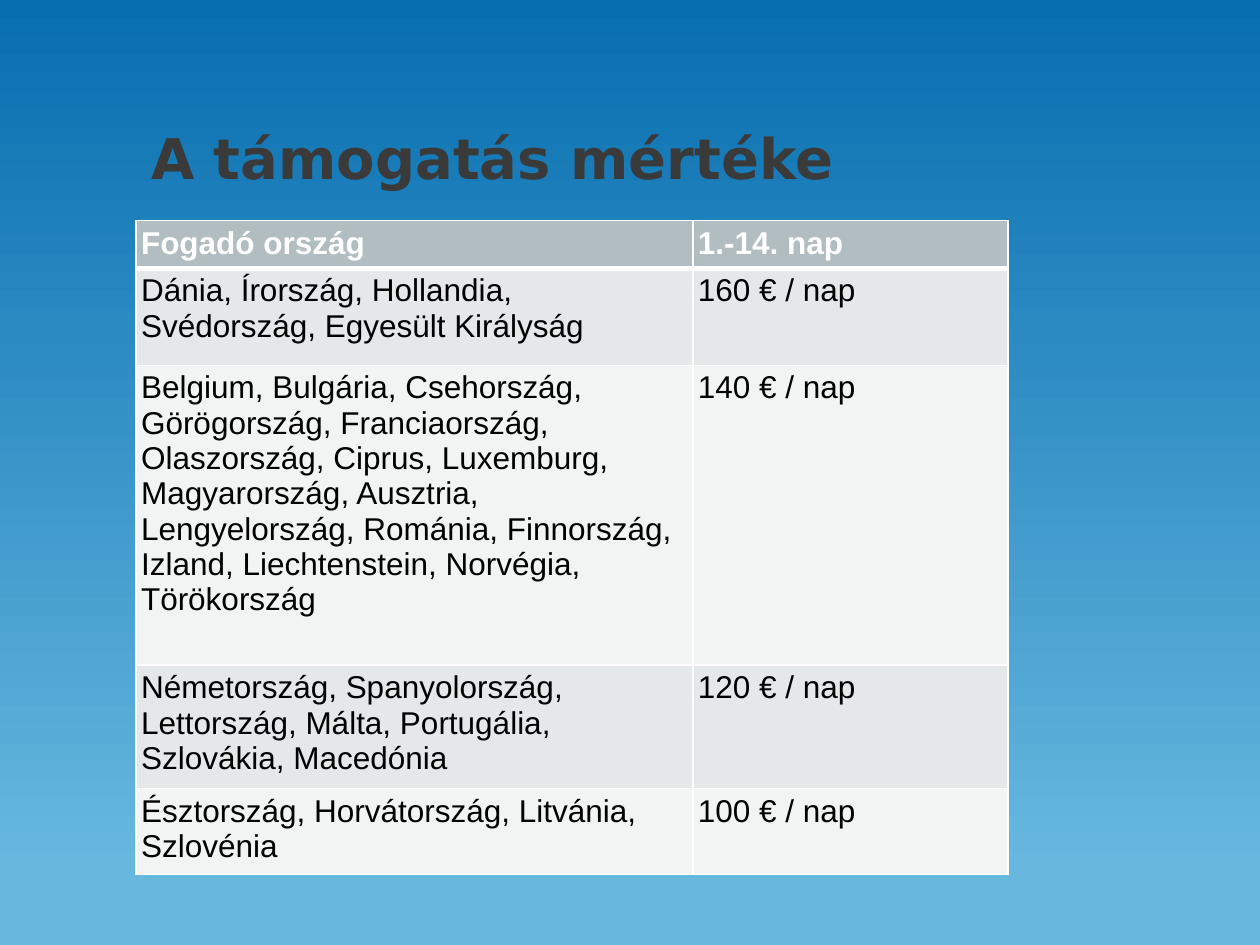
from lxml import etree
from pptx import Presentation
from pptx.dml.color import RGBColor
from pptx.enum.text import MSO_ANCHOR
from pptx.oxml.ns import qn
from pptx.util import Inches, Pt

MIDDLE = MSO_ANCHOR.MIDDLE
DEEP = RGBColor(0x07, 0x6E, 0xB0)
SKY = RGBColor(0x66, 0xB8, 0xDF)
DARK = RGBColor(0x3A, 0x3A, 0x3A)
WHITE = RGBColor(0xFF, 0xFF, 0xFF)
BLACK = RGBColor(0, 0, 0)
HEAD = RGBColor(0xB2, 0xBD, 0xC1)
BANDS = (RGBColor(0xF2, 0xF4, 0xF4), RGBColor(0xE4, 0xE8, 0xE9))

WIDTHS = (4.42, 2.5)
HEIGHTS = (0.37, 0.77, 2.38, 0.95, 0.64)
ROWS = (
    ("Fogadó ország", "1.-14. nap"),
    ("Dánia, Írország, Hollandia, Svédország, Egyesült Királyság", "160 € / nap"),
    ("Belgium, Bulgária, Csehország, Görögország, Franciaország, "
     "Olaszország, Ciprus, Luxemburg, Magyarország, Ausztria, "
     "Lengyelország, Románia, Finnország, Izland, Liechtenstein, "
     "Norvégia, Törökország", "140 € / nap"),
    ("Németország, Spanyolország, Lettország, Málta, Portugália, "
     "Szlovákia, Macedónia", "120 € / nap"),
    ("Észtország, Horvátország, Litvánia, Szlovénia", "100 € / nap"),
)


def paint_back(slide):
    """Fill the background with a gradient from top to bottom."""
    fill = slide.background.fill
    fill.gradient()
    fill.gradient_angle = 270
    for stop, color, place in zip(fill.gradient_stops, (DEEP, SKY), (0, 0.92)):
        stop.color.rgb = color
        stop.position = place


def set_text(frame, text, font, size, color, bold):
    """Write one styled paragraph into a text frame."""
    frame.text = text
    frame.word_wrap = True
    style = frame.paragraphs[0].runs[0].font
    style.name = font
    style.size = Pt(size)
    style.color.rgb = color
    style.bold = bold


def add_title(slide, text):
    """Add the slide heading."""
    box = slide.shapes.add_textbox(
        Inches(1.1), Inches(0.74), Inches(7.79), Inches(1.01))
    set_text(box.text_frame, text, "DejaVu Sans", 32, DARK, True)
    box.text_frame.vertical_anchor = MIDDLE


def set_edges(cell, top, bottom):
    """Draw white cell borders, with top and bottom widths in points."""
    props = cell._tc.get_or_add_tcPr()
    sides = (("a:lnL", 1), ("a:lnR", 1), ("a:lnT", top), ("a:lnB", bottom))
    for spot, (tag, width) in enumerate(sides):
        line = etree.Element(qn(tag), w=str(Pt(width)))
        fill = etree.SubElement(line, qn("a:solidFill"))
        etree.SubElement(fill, qn("a:srgbClr"), val=str(WHITE))
        props.insert(spot, line)


def fill_cell(cell, text, row):
    """Style a cell by its row: header or banded body."""
    first = row == 0
    set_text(cell.text_frame, text, "Arial", 18, WHITE if first else BLACK, first)
    cell.margin_left = cell.margin_right = Inches(0.04)
    cell.margin_top = cell.margin_bottom = Inches(0.04)
    cell.fill.solid()
    cell.fill.fore_color.rgb = HEAD if first else BANDS[row % 2]
    set_edges(cell, 3 if row == 1 else 1, 3 if first else 1)


def add_rates(slide):
    """Add the table of daily rates by host country."""
    table = slide.shapes.add_table(
        len(ROWS), len(WIDTHS), Inches(1.08), Inches(1.75),
        Inches(sum(WIDTHS)), Inches(sum(HEIGHTS))).table
    for col, width in zip(table.columns, WIDTHS):
        col.width = Inches(width)
    for row, (texts, height) in enumerate(zip(ROWS, HEIGHTS)):
        table.rows[row].height = Inches(height)
        for col, text in enumerate(texts):
            fill_cell(table.cell(row, col), text, row)


def main():
    """Build and save the slide."""
    deck = Presentation()
    deck.slide_width, deck.slide_height = Inches(10), Inches(7.5)
    slide = deck.slides.add_slide(deck.slide_layouts[6])
    paint_back(slide)
    add_title(slide, "A támogatás mértéke")
    add_rates(slide)
    deck.save("out.pptx")


if __name__ == "__main__":
    main()
